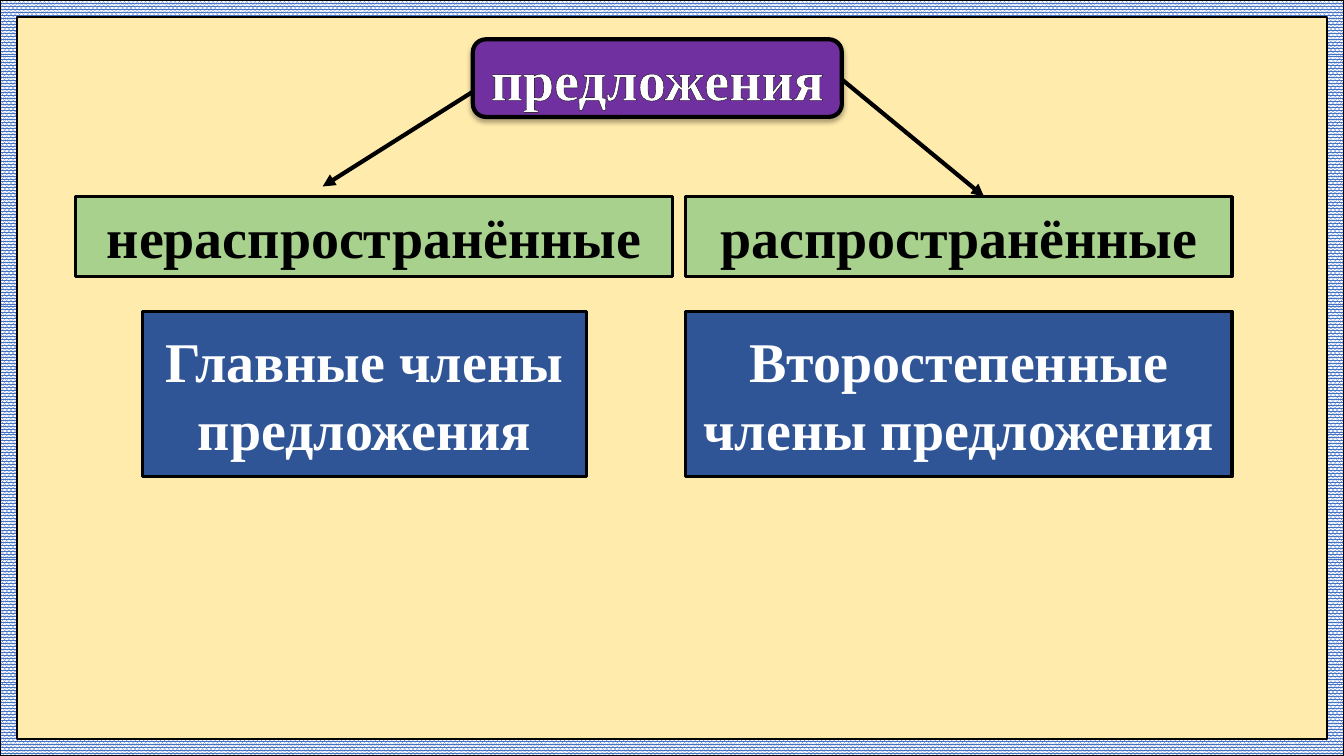
from lxml.etree import SubElement
from pptx import Presentation
from pptx.dml.color import RGBColor
from pptx.enum.dml import MSO_PATTERN
from pptx.enum.shapes import MSO_CONNECTOR, MSO_SHAPE
from pptx.enum.text import MSO_ANCHOR, PP_ALIGN
from pptx.oxml import parse_xml
from pptx.oxml.ns import nsdecls, qn
from pptx.util import Inches, Pt

WIDTH, HEIGHT = 13.33, 7.5
FONT, SIZE = "Times New Roman", 40
COLORS = {
    "cream": "FFEBAB", "edge": "325491", "weave": "4472C4", "white": "FFFFFF",
    "black": "000000", "purple": "7030A0", "green": "A9D18E", "blue": "2F5597",
}

TITLE = ("предложения", (4.69, 0.39, 3.66, 0.77))
# Rows: top, height, fill, text colour
ROWS = {
    "kinds": (1.95, 0.79, "green", "black"),
    "members": (3.09, 1.64, "blue", "white"),
}
# Boxes: row, left, width, text
RIGHT_COLUMN = (6.8, 5.42)
BOXES = [
    ("kinds", 0.75, 5.92, "нераспространённые"),
    ("kinds", *RIGHT_COLUMN, "распространённые"),
    ("members", 1.41, 4.41, "Главные члены предложения"),
    ("members", *RIGHT_COLUMN, "Второстепенные члены предложения"),
]
ARROWS = [((4.69, 0.91), (3.2, 1.85)), ((8.34, 0.78), (9.76, 1.95))]


def rgb(name):
    return RGBColor.from_string(COLORS[name])


def add_box(s, place, fill, kind=MSO_SHAPE.RECTANGLE, line="black", weight=2.25):
    sp = s.shapes.add_shape(kind, *map(Inches, place))
    sp.shadow.inherit = False
    sp.fill.solid()
    sp.fill.fore_color.rgb = rgb(fill)
    sp.line.color.rgb = rgb(line)
    sp.line.width = Pt(weight)
    return sp


def write(sp, text, color="black", size=SIZE, bold=True):
    tf = sp.text_frame
    tf.word_wrap = True
    tf.vertical_anchor = MSO_ANCHOR.MIDDLE
    p = tf.paragraphs[0]
    p.alignment = PP_ALIGN.CENTER
    r = p.add_run()
    r.text = text
    r.font.name, r.font.size, r.font.bold = FONT, Pt(size), bold
    r.font.color.rgb = rgb(color)
    return r


def outline_text(r, color, weight):
    r.font._element.insert(0, parse_xml(
        f'<a:ln {nsdecls("a")} w="{Pt(weight)}"><a:solidFill>'
        f'<a:srgbClr val="{COLORS[color]}"/></a:solidFill></a:ln>'))


def drop_shadow(sp, color, opacity, blur, distance, angle):
    effects = sp._element.spPr.find(qn("a:effectLst"))
    effects.append(parse_xml(
        f'<a:outerShdw {nsdecls("a")} blurRad="{Pt(blur)}" dist="{Pt(distance)}" '
        f'dir="{angle * 60000}" rotWithShape="0"><a:srgbClr val="{COLORS[color]}">'
        f'<a:alpha val="{opacity * 1000}"/></a:srgbClr></a:outerShdw>'))


def add_arrow(s, start, end):
    c = s.shapes.add_connector(MSO_CONNECTOR.STRAIGHT, *map(Inches, start + end))
    c.line.color.rgb = rgb("black")
    c.line.width = Pt(3)
    SubElement(c.line._get_or_add_ln(), qn("a:tailEnd"), type="triangle")
    SubElement(c._element.spPr, qn("a:effectLst"))


def main():
    prs = Presentation()
    prs.slide_width, prs.slide_height = Inches(WIDTH), Inches(HEIGHT)
    s = prs.slides.add_slide(prs.slide_layouts[6])

    page = (0, 0, WIDTH, HEIGHT)
    add_box(s, page, "cream", line="edge", weight=1)
    frame = add_box(s, page, "weave", kind=MSO_SHAPE.FRAME, weight=1.5)
    frame.adjustments[0] = 0.022
    frame.fill.patterned()
    frame.fill.pattern = MSO_PATTERN.PERCENT_80
    frame.fill.fore_color.rgb = rgb("weave")
    frame.fill.back_color.rgb = rgb("white")

    text, place = TITLE
    title = add_box(s, place, "purple", kind=MSO_SHAPE.ROUNDED_RECTANGLE, weight=3)
    drop_shadow(title, "black", opacity=32, blur=3.5, distance=2.2, angle=90)
    outline_text(write(title, text, color="white"), "black", 0.75)

    for row, left, width, text in BOXES:
        top, height, fill, color = ROWS[row]
        write(add_box(s, (left, top, width, height), fill), text, color=color)
    for start, end in ARROWS:
        add_arrow(s, start, end)

    prs.save("out.pptx")


if __name__ == "__main__":
    main()
